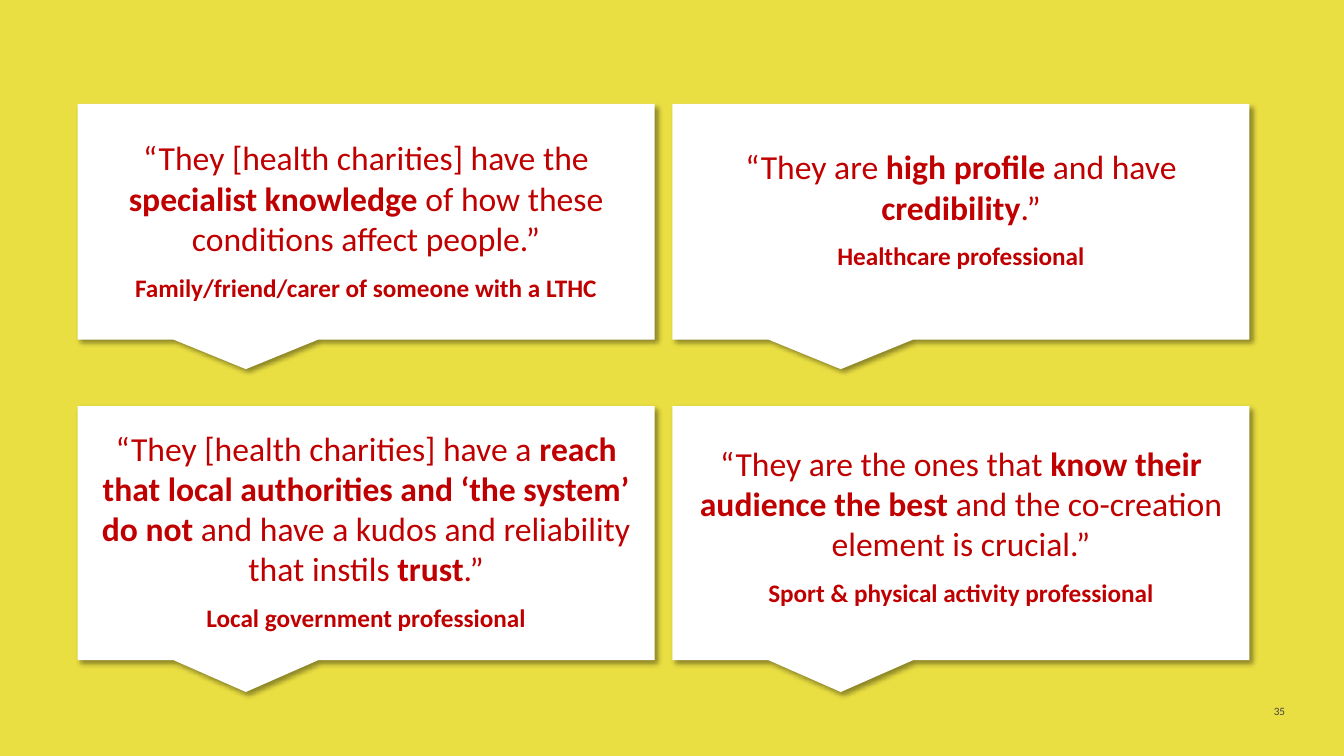
import pptx
import pptx.dml.color
import pptx.enum.shapes
import pptx.enum.text
import pptx.oxml
import pptx.oxml.ns
import pptx.util

BACKGROUND, CARD, QUOTE_RED, PAGE_GREY = "EADF42", "FFFFFF", "C00000", "454341"
CARD_SHARE = 0.97
CARD_HEIGHTS = (0.78, 0.84)
TEXT_INSET, TEXT_SHARE = 0.04, 0.89
LINE_SHARE, SPEAKER_SHARE = 0.13, 0.15

QUOTES = [
    (0, 0, 0.11, 3,
     "“They [health charities] have the *specialist knowledge* of how these conditions affect people.”",
     "Family/friend/carer of someone with a LTHC"),
    (1, 0, 0.14, 2,
     "“They are *high profile *and have *credibility*.”",
     "Healthcare professional"),
    (0, 1, 0.07, 4,
     "“They [health charities] have a *reach that local authorities and ‘the system’ do not *"
     "and have a kudos and reliability that instils *trust*.”",
     "Local government professional"),
    (1, 1, 0.12, 3,
     "“They are the ones that *know their audience the best *and the co-creation element is crucial.”",
     "Sport & physical activity professional"),
]


def colour(value):
    return pptx.dml.color.RGBColor.from_string(value)


def apply(target, values):
    for name, value in values.items():
        setattr(target, name, value)


class QuoteSlide:
    font = "Calibri"
    left, top = 0.77, 1.03
    column, row = 5.9, 3

    def __init__(self, deck):
        self.slide = deck.slides.add_slide(deck.slide_layouts[6])
        fill = self.slide.background.fill
        fill.solid()
        fill.fore_color.rgb = colour(BACKGROUND)

    def area(self, column, row, columns, rows):
        lengths = (self.left + column * self.column, self.top + row * self.row,
                   columns * self.column, rows * self.row)
        return [pptx.util.Inches(length) for length in lengths]

    def callout(self, *cell):
        bubble = self.slide.shapes.add_shape(
            pptx.enum.shapes.MSO_SHAPE.RECTANGULAR_CALLOUT, *self.area(*cell))
        bubble.fill.solid()
        bubble.fill.fore_color.rgb = colour(CARD)
        bubble.line.fill.background()
        bubble.shadow.inherit = False
        effects = bubble._element.spPr.find(pptx.oxml.ns.qn("a:effectLst"))
        effects.append(pptx.oxml.parse_xml(
            f'<a:outerShdw {pptx.oxml.ns.nsdecls("a")} blurRad="50800" dist="38100" '
            'dir="2700000" algn="tl" rotWithShape="0"><a:srgbClr val="000000">'
            '<a:alpha val="40000"/></a:srgbClr></a:outerShdw>'))

    def text(self, cell, paragraphs, shade, frame_format, paragraph_format):
        frame = self.slide.shapes.add_textbox(*self.area(*cell)).text_frame
        apply(frame, {"word_wrap": True, "margin_left": 0, "margin_right": 0,
                      "margin_top": 0, "margin_bottom": 0,
                      "auto_size": pptx.enum.text.MSO_AUTO_SIZE.SHAPE_TO_FIT_TEXT,
                      **frame_format})
        for index, (marked, size) in enumerate(paragraphs):
            paragraph = frame.add_paragraph() if index else frame.paragraphs[0]
            apply(paragraph, paragraph_format)
            for part, words in enumerate(marked.split("*")):
                if words:
                    run = paragraph.add_run()
                    run.text = words
                    apply(run.font, {"name": self.font, "size": pptx.util.Pt(size),
                                     "bold": part % 2 == 1})
                    run.font.color.rgb = colour(shade)

    def quote(self, column, row, offset, lines, words, speaker):
        self.callout(column, row, CARD_SHARE, CARD_HEIGHTS[row])
        self.text((column + TEXT_INSET, row + offset, TEXT_SHARE,
                   lines * LINE_SHARE + SPEAKER_SHARE),
                  [(words, 24), (f"*{speaker}*", 18)], QUOTE_RED, {},
                  {"alignment": pptx.enum.text.PP_ALIGN.CENTER,
                   "space_before": pptx.util.Pt(10)})

    def page_number(self, number):
        self.text((1.96, 1.98, 0.07, 0.05), [(number, 8)], PAGE_GREY,
                  {"vertical_anchor": pptx.enum.text.MSO_ANCHOR.BOTTOM},
                  {"alignment": pptx.enum.text.PP_ALIGN.RIGHT})


def main():
    deck = pptx.Presentation()
    apply(deck, {"slide_width": pptx.util.Inches(13.33),
                 "slide_height": pptx.util.Inches(7.5)})
    charities = QuoteSlide(deck)
    charities.page_number("35")
    for quote in QUOTES:
        charities.quote(*quote)
    deck.save("out.pptx")


if __name__ == "__main__":
    main()
